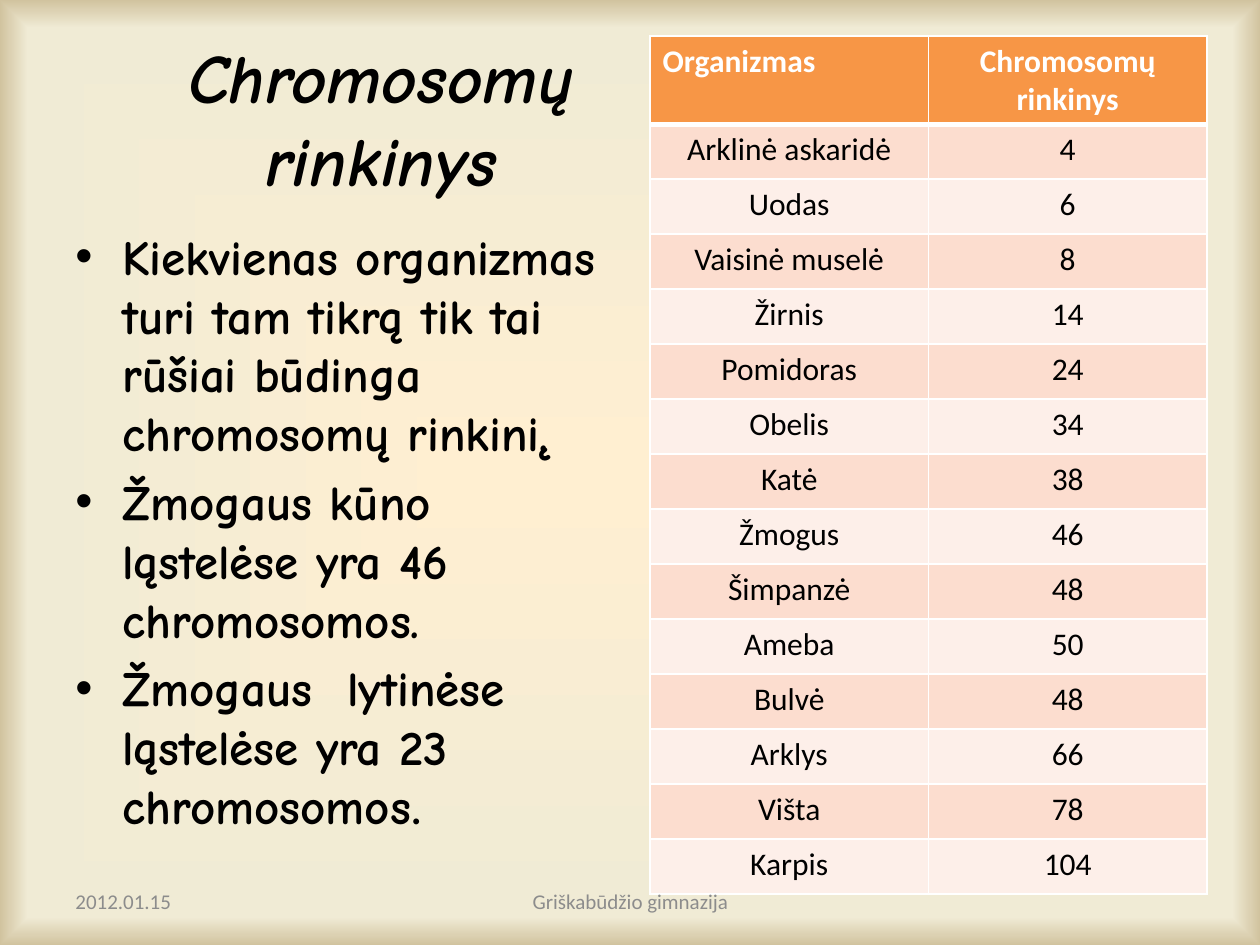
import lxml.etree
import pptx
import pptx.dml.color
import pptx.enum.text
import pptx.oxml
import pptx.oxml.ns
import pptx.util

COLORS = {
    "center": "FFEFD1", "paper": "F0EBD5", "edge": "D1C39F",
    "text": "000000", "muted": "8C8C8C", "white": "FFFFFF",
    "header": "F79646", "odd": "FCDDCF", "even": "FDEFE9",
}
DISPLAY, PLAIN = "Comic Neue", "Calibri"
ALIGN, ANCHOR = pptx.enum.text.PP_ALIGN, pptx.enum.text.MSO_ANCHOR
ORGANISMS = [
    ("Arklinė askaridė", 4), ("Uodas", 6), ("Vaisinė muselė", 8), ("Žirnis", 14),
    ("Pomidoras", 24), ("Obelis", 34), ("Katė", 38), ("Žmogus", 46),
    ("Šimpanzė", 48), ("Ameba", 50), ("Bulvė", 48), ("Arklys", 66),
    ("Višta", 78), ("Karpis", 104),
]
FACTS = [
    "Kiekvienas organizmas turi tam tikrą tik tai rūšiai būdinga chromosomų rinkinį.",
    "Žmogaus kūno ląstelėse yra 46 chromosomos.",
    "Žmogaus  lytinėse ląstelėse yra 23 chromosomos",
]


def px(length):
    """Turn a length in px into EMU."""
    return pptx.util.Emu(round(length * 914400 / 126))


def rgb(name):
    """Look up a colour by name."""
    return pptx.dml.color.RGBColor.from_string(COLORS[name])


def style(font, family, size, color, bold=False, italic=False):
    """Set the look of a font."""
    font.name, font.size, font.bold, font.italic = family, pptx.util.Pt(size), bold, italic
    font.color.rgb = rgb(color)


def paint_background(slide):
    """Fill the slide with a gradient that darkens at its edges."""
    fill = slide.background.fill
    fill.solid()
    stops = "".join(
        f'<a:gs pos="{pos}000"><a:srgbClr val="{COLORS[name]}"/></a:gs>'
        for pos, name in ((0, "center"), (94, "paper"), (100, "edge")))
    gradient = pptx.oxml.parse_xml(
        f'<a:gradFill {pptx.oxml.ns.nsdecls("a")} rotWithShape="1"><a:gsLst>{stops}</a:gsLst>'
        '<a:path path="shape"><a:fillToRect l="50000" t="50000" r="50000" b="50000"/></a:path>'
        '</a:gradFill>')
    solid = slide.background._cSld.find(".//" + pptx.oxml.ns.qn("a:solidFill"))
    solid.getparent().replace(solid, gradient)


def add_frame(slide, box, anchor):
    """Add a wrapping text box and return its text frame."""
    frame = slide.shapes.add_textbox(*map(px, box)).text_frame
    frame.word_wrap = True
    frame.vertical_anchor = anchor
    return frame


def add_line(slide, box, text, align, **look):
    """Add one vertically centred paragraph."""
    paragraph = add_frame(slide, box, ANCHOR.MIDDLE).paragraphs[0]
    paragraph.text, paragraph.alignment = text, align
    style(paragraph.font, **look)


def add_facts(slide, box):
    """Add the bulleted facts."""
    frame = add_frame(slide, box, ANCHOR.TOP)
    for index, fact in enumerate(FACTS):
        paragraph = frame.add_paragraph() if index else frame.paragraphs[0]
        paragraph.text = fact
        paragraph.space_before = pptx.util.Pt(5.6)
        style(paragraph.font, DISPLAY, 28, "text", bold=True)
        properties = paragraph._p.get_or_add_pPr()
        properties.set("marL", str(px(47)))
        properties.set("indent", str(px(-47)))
        bullet_font = pptx.oxml.parse_xml(
            f'<a:buFont {pptx.oxml.ns.nsdecls("a")} typeface="Arial"/>')
        bullet = pptx.oxml.parse_xml(f'<a:buChar {pptx.oxml.ns.nsdecls("a")} char="•"/>')
        properties.find(pptx.oxml.ns.qn("a:defRPr")).addprevious(bullet_font)
        bullet_font.addnext(bullet)
    full_stop = paragraph.add_run()
    full_stop.text = "."
    style(full_stop.font, PLAIN, 28, "text")


def add_borders(cell, bottom):
    """Draw white borders around a cell."""
    properties = cell._tc.get_or_add_tcPr()
    for side, width in (("L", 1), ("R", 1), ("T", 1), ("B", bottom)):
        properties.append(pptx.oxml.parse_xml(
            f'<a:ln{side} {pptx.oxml.ns.nsdecls("a")} w="{pptx.util.Pt(width)}">'
            f'<a:solidFill><a:srgbClr val="{COLORS["white"]}"/></a:solidFill></a:ln{side}>'))


def add_organisms(slide, box, header_height):
    """Add the table of chromosome counts."""
    rows = [("Organizmas", "Chromosomų rinkinys"), *ORGANISMS]
    table = slide.shapes.add_table(len(rows), 2, *map(px, box)).table
    row_height = (box[3] - header_height) // len(ORGANISMS)
    for r, values in enumerate(rows):
        header = r == 0
        table.rows[r].height = px(header_height if header else row_height)
        band = "header" if header else "odd" if r % 2 else "even"
        for c, value in enumerate(values):
            cell = table.cell(r, c)
            add_borders(cell, 3 if header else 1)
            cell.fill.solid()
            cell.fill.fore_color.rgb = rgb(band)
            paragraph = cell.text_frame.paragraphs[0]
            paragraph.text = str(value)
            paragraph.alignment = ALIGN.LEFT if header and c == 0 else ALIGN.CENTER
            style(paragraph.font, PLAIN, 18, "white" if header else "text", bold=header)


def main():
    """Build and save the slide."""
    deck = pptx.Presentation()
    deck.slide_width, deck.slide_height = px(1260), px(945)
    slide = deck.slides.add_slide(deck.slide_layouts[6])
    paint_background(slide)
    add_line(slide, (63, 38, 636, 158), "Chromosomų rinkinys", ALIGN.CENTER,
             family=DISPLAY, size=39.6, color="text", bold=True, italic=True)
    add_facts(slide, (63, 220, 557, 624))
    add_organisms(slide, (650, 36, 557, 860), header_height=79)
    footer = {"family": PLAIN, "size": 12, "color": "muted"}
    add_line(slide, (63, 876, 294, 50), "2012.01.15", ALIGN.LEFT, **footer)
    add_line(slide, (431, 876, 399, 50), "Griškabūdžio gimnazija", ALIGN.CENTER, **footer)
    deck.save("out.pptx")


if __name__ == "__main__":
    main()
